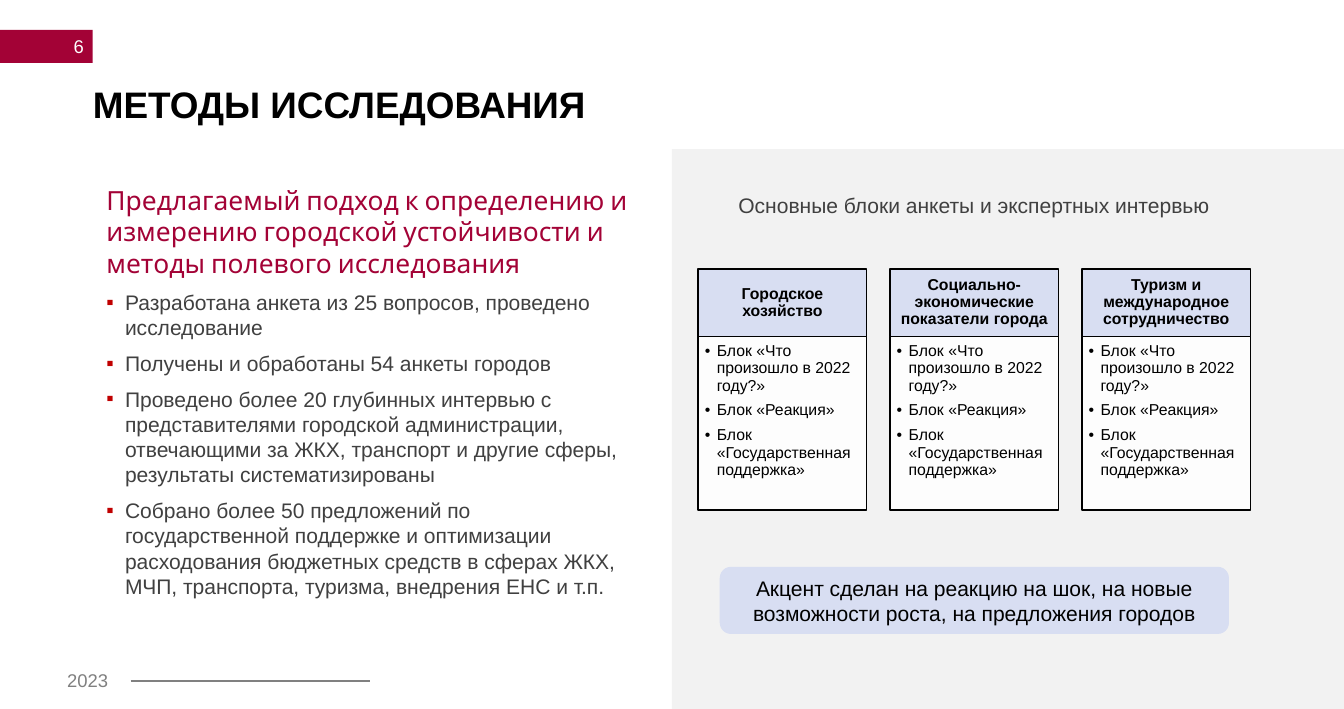
from lxml import etree
from pptx import Presentation
from pptx.dml.color import RGBColor
from pptx.enum.shapes import MSO_CONNECTOR, MSO_SHAPE
from pptx.enum.text import MSO_ANCHOR, MSO_AUTO_SIZE, PP_ALIGN
from pptx.oxml.ns import qn
from pptx.util import Cm, Pt

RECT, ROUND = MSO_SHAPE.RECTANGLE, MSO_SHAPE.ROUNDED_RECTANGLE
LEFT, CENTER, RIGHT = PP_ALIGN.LEFT, PP_ALIGN.CENTER, PP_ALIGN.RIGHT
TOP, MIDDLE = MSO_ANCHOR.TOP, MSO_ANCHOR.MIDDLE
WINE, RED, BLUE, PALE = "A30236", "C00000", "D8DEF2", "F2F2F2"
BLACK, WHITE, DARK, GRAY = "000000", "FFFFFF", "404040", "808080"
PAD = (0.25, 0.13, 0.25, 0.13)

TITLE = "МЕТОДЫ ИССЛЕДОВАНИЯ"
LEAD = ("Предлагаемый подход к определению и измерению городской "
        "устойчивости и методы полевого исследования")
POINTS = [
    "Разработана анкета из 25 вопросов, проведено исследование",
    "Получены и обработаны 54 анкеты городов",
    "Проведено более 20 глубинных интервью с представителями городской "
    "администрации, отвечающими за ЖКХ, транспорт и другие сферы, "
    "результаты систематизированы",
    "Собрано более 50 предложений по государственной поддержке и "
    "оптимизации расходования бюджетных средств в сферах ЖКХ, МЧП, "
    "транспорта, туризма, внедрения ЕНС и т.п.",
]
CAPTION = "Основные блоки анкеты и экспертных интервью"
HEADS = [
    "Городское хозяйство",
    "Социально-экономические показатели города",
    "Туризм и международное сотрудничество",
]
BLOCKS = [
    "Блок «Что произошло в 2022 году?»",
    "Блок «Реакция»",
    "Блок «Государственная поддержка»",
]
ACCENT = ("Акцент сделан на реакцию на шок, на новые возможности роста, "
          "на предложения городов")


def color(code):
    return RGBColor.from_string(code)


def set_frame(shape, anchor=TOP, pad=PAD):
    frame = shape.text_frame
    frame.word_wrap = True
    frame.auto_size = MSO_AUTO_SIZE.NONE
    frame.vertical_anchor = anchor
    (frame.margin_left, frame.margin_top,
     frame.margin_right, frame.margin_bottom) = map(Cm, pad)
    return frame


def add_bullet(para, char, tint, indent):
    props = para._p.get_or_add_pPr()
    props.set("marL", str(Cm(indent)))
    props.set("indent", str(-Cm(indent)))
    fill = etree.SubElement(props, qn("a:buClr"))
    etree.SubElement(fill, qn("a:srgbClr"), val=tint)
    etree.SubElement(props, qn("a:buFont"), typeface="Arial")
    etree.SubElement(props, qn("a:buChar"), char=char)


def add_para(frame, text, size, tint, align=LEFT, bold=False, face="Arial",
             bullet=None, line=None, before=None, after=None):
    first = frame.paragraphs[0]
    para = frame.add_paragraph() if first.runs else first
    para.add_run().text = text
    if bullet:
        add_bullet(para, *bullet)
    para.alignment = align
    if line:
        para.line_spacing = line
    if before is not None:
        para.space_before = Pt(before)
    if after is not None:
        para.space_after = Pt(after)
    font = para.font
    font.name, font.size, font.bold = face, Pt(size), bold
    font.color.rgb = color(tint)


def add_box(slide, kind, place, fill, edge=None, alpha=None):
    box = slide.shapes.add_shape(kind, *map(Cm, place))
    box.shadow.inherit = False
    box.fill.solid()
    box.fill.fore_color.rgb = color(fill)
    if alpha:
        tint = box._element.spPr.find(qn("a:solidFill"))[0]
        etree.SubElement(tint, qn("a:alpha"), val=str(alpha * 1000))
    if edge:
        box.line.color.rgb = color(edge)
        box.line.width = Pt(1)
    else:
        box.line.fill.background()
    return box


def add_text(slide, place):
    return set_frame(slide.shapes.add_textbox(*map(Cm, place)))


def add_line(slide, ends, tint, width):
    line = slide.shapes.add_connector(MSO_CONNECTOR.STRAIGHT, *map(Cm, ends))
    line.line.color.rgb = color(tint)
    line.line.width = Pt(width)
    etree.SubElement(line._element.spPr, qn("a:effectLst"))


def add_title(slide):
    title = slide.shapes.title
    title.left, title.top, title.width, title.height = map(
        Cm, (2.49, 2.31, 29.34, 0.99))
    frame = set_frame(title, pad=(0, 0, 0, 0))
    add_para(frame, TITLE, 28, BLACK, bold=True, line=0.9)


def add_card(slide, left, head):
    top = add_box(slide, RECT, (left, 7.21, 4.52, 1.81), BLUE, BLACK)
    add_para(set_frame(top, MIDDLE), head, 12, BLACK, CENTER, True, line=0.9)
    body = add_box(slide, RECT, (left, 9.02, 4.52, 4.65), WHITE, BLACK, 90)
    frame = set_frame(body, pad=(0.18, 0.18, 0.23, 0.25))
    for block in BLOCKS:
        add_para(frame, block, 12, BLACK, bullet=("•", BLACK, 0.32),
                 line=0.9, after=6)


def main():
    deck = Presentation()
    deck.slide_width, deck.slide_height = Cm(36), Cm(19)
    slide = deck.slides.add_slide(deck.slide_layouts[5])
    add_title(slide)

    tab = add_box(slide, RECT, (0, 0.8, 2.48, 0.89), WINE)
    frame = set_frame(tab, MIDDLE, (0, 0, 0.23, 0))
    add_para(frame, "6", 14, WHITE, RIGHT)
    add_para(add_text(slide, (1.55, 17.8, 1.75, 0.86)), "2023", 14, GRAY)
    add_line(slide, (3.5, 18.26, 9.9, 18.26), GRAY, 1.5)

    frame = add_text(slide, (2.6, 4.8, 14.8, 12.88))
    add_para(frame, LEAD, 20, WINE, face="Cabin")
    for point in POINTS:
        add_para(frame, point, 16, DARK, bullet=("▪", RED, 0.5), before=8)

    add_box(slide, RECT, (18, 4, 18, 15), PALE)
    frame = add_text(slide, (18.57, 5.03, 15.04, 0.94))
    add_para(frame, CAPTION, 16, DARK, CENTER)
    for spot, head in enumerate(HEADS):
        add_card(slide, 18.7 + 5.14 * spot, head)
    note = add_box(slide, ROUND, (19.28, 15.19, 13.64, 1.8), BLUE)
    add_para(set_frame(note, MIDDLE), ACCENT, 16, BLACK, CENTER)

    deck.save("out.pptx")


if __name__ == "__main__":
    main()
